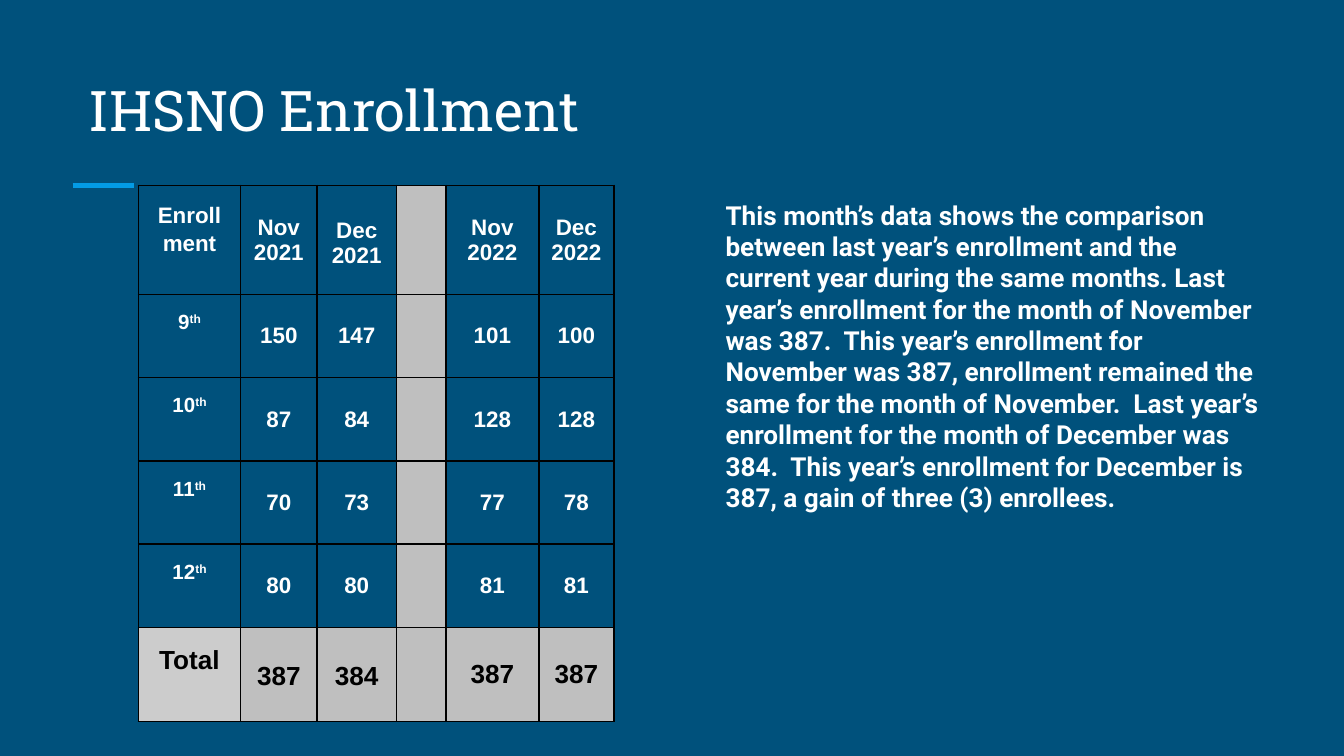
from lxml.etree import SubElement
from pptx import Presentation
from pptx.dml.color import RGBColor
from pptx.enum.shapes import MSO_CONNECTOR
from pptx.enum.text import MSO_ANCHOR, PP_ALIGN
from pptx.oxml.ns import qn
from pptx.util import Inches, Pt

NAVY = RGBColor(0x00, 0x51, 0x7C)
ACCENT = RGBColor(0x03, 0x9B, 0xE5)
WHITE = RGBColor(0xFF, 0xFF, 0xFF)
BLACK = RGBColor(0x00, 0x00, 0x00)
GRAY = RGBColor(0xBF, 0xBF, 0xBF)
LIGHT_GRAY = RGBColor(0xCC, 0xCC, 0xCC)

SLIDE_WIDTH = 10
SLIDE_HEIGHT = SLIDE_WIDTH * 9 / 16
COLUMN_WIDTHS = [0.76, 0.57, 0.59, 0.37, 0.69, 0.56]
ROW_HEIGHTS = [0.81, 0.62, 0.62, 0.62, 0.62, 0.7]
GAP_COLUMN = 3
ENROLLMENT = [
    ["Enrollment", "Nov\n2021", "Dec\n2021", "", "Nov\n2022", "Dec\n2022"],
    ["9", "150", "147", "", "101", "100"],
    ["10", "87", "84", "", "128", "128"],
    ["11", "70", "73", "", "77", "78"],
    ["12", "80", "80", "", "81", "81"],
    ["Total", "387", "384", "", "387", "387"],
]
TOTAL_ROW = len(ENROLLMENT) - 1
SUMMARY = (
    "This month’s data shows the comparison between last year’s enrollment and the "
    "current year during the same months. Last year’s enrollment for the month of "
    "November was 387.  This year’s enrollment for November was 387, enrollment "
    "remained the same for the month of November.  Last year’s enrollment for the "
    "month of December was 384.  This year’s enrollment for December is 387, a gain "
    "of three (3) enrollees."
)


def add_run(paragraph, text, size, font_name, color, bold=True):
    run = paragraph.add_run()
    run.text = text
    for name, value in {"size": Pt(size), "name": font_name, "bold": bold}.items():
        setattr(run.font, name, value)
    run.font.color.rgb = color
    return run


def add_text(slide, box, text, size, font_name, bold, anchor):
    frame = slide.shapes.add_textbox(*map(Inches, box)).text_frame
    margins = dict.fromkeys(
        ["margin_left", "margin_top", "margin_right", "margin_bottom"], Inches(0.1))
    for name, value in {**margins, "word_wrap": True, "vertical_anchor": anchor}.items():
        setattr(frame, name, value)
    add_run(frame.paragraphs[0], text, size, font_name, WHITE, bold)


def add_accent_line(slide, left, top, width):
    line = slide.shapes.add_connector(
        MSO_CONNECTOR.STRAIGHT, *map(Inches, (left, top, left + width, top)))
    line.line.color.rgb = ACCENT
    line.line.width = Pt(3)
    SubElement(line._element.spPr, qn("a:effectLst"))


def set_borders(cell):
    properties = cell._tc.get_or_add_tcPr()
    for position, side in enumerate(("a:lnL", "a:lnR", "a:lnT", "a:lnB")):
        border = SubElement(properties, qn(side), w=str(Pt(1)))
        fill = SubElement(border, qn("a:solidFill"))
        SubElement(fill, qn("a:srgbClr"), val=str(BLACK))
        # Borders come before the fill in the cell properties
        properties.insert(position, border)


def fill_cell(cell, row, column, text):
    is_label, is_total = column == 0, row == TOTAL_ROW
    is_dec_2021 = (row, column) == (0, 2)
    top_anchored = is_label or is_dec_2021
    # The label column is a little tighter, so its heading breaks as "Enroll / ment"
    side_margin = Inches(0.08 if is_label else 0.07)
    settings = {
        "margin_left": side_margin,
        "margin_right": side_margin,
        "margin_top": Inches(0.24 if is_dec_2021 else 0.1),
        "margin_bottom": Inches(0.1),
        "vertical_anchor": MSO_ANCHOR.TOP if top_anchored else MSO_ANCHOR.MIDDLE,
    }
    for name, value in settings.items():
        setattr(cell, name, value)

    # Background
    if is_total or column == GAP_COLUMN:
        cell.fill.solid()
        cell.fill.fore_color.rgb = LIGHT_GRAY if is_label else GRAY
    else:
        cell.fill.background()
    set_borders(cell)
    if not text:
        return

    # Text, with ordinal endings on the grade labels
    is_grade = is_label and text.isdigit()
    size = 14 if is_total else 11 if is_grade else 12
    color = BLACK if is_total else WHITE
    frame = cell.text_frame
    for index, line in enumerate(text.split("\n")):
        paragraph = frame.add_paragraph() if index else frame.paragraphs[0]
        paragraph.alignment = PP_ALIGN.CENTER
        if is_label or (is_total and column < GAP_COLUMN):
            paragraph.line_spacing = 1.15
            paragraph.space_before = Pt(12)
        add_run(paragraph, line, size, "Arial", color)
        if is_grade:
            ending = add_run(paragraph, "th", size, "Arial", color)
            ending._r.get_or_add_rPr().set("baseline", "30000")


def add_enrollment_table(slide, left, top):
    box = (left, top, sum(COLUMN_WIDTHS), sum(ROW_HEIGHTS))
    table = slide.shapes.add_table(
        len(ROW_HEIGHTS), len(COLUMN_WIDTHS), *map(Inches, box)).table
    table.first_row = table.horz_banding = False
    for column, width in zip(table.columns, COLUMN_WIDTHS):
        column.width = Inches(width)
    for row, height in zip(table.rows, ROW_HEIGHTS):
        row.height = Inches(height)
    for row, values in enumerate(ENROLLMENT):
        for column, text in enumerate(values):
            fill_cell(table.cell(row, column), row, column, text)


def main():
    presentation = Presentation()
    presentation.slide_width = Inches(SLIDE_WIDTH)
    presentation.slide_height = Inches(SLIDE_HEIGHT)
    slide = presentation.slides.add_slide(presentation.slide_layouts[6])
    slide.background.fill.solid()
    slide.background.fill.fore_color.rgb = NAVY

    # Heading
    add_accent_line(slide, 0.54, 1.38, 0.46)
    add_text(slide, (0.56, 0.41, 9.15, 0.75), "IHSNO Enrollment",
             30, "Roboto Slab", False, MSO_ANCHOR.BOTTOM)

    # Figures and commentary
    add_enrollment_table(slide, 1.03, 1.38)
    add_text(slide, (5.3, 1.38, 4.19, 2.79), SUMMARY,
             14, "Roboto", True, MSO_ANCHOR.TOP)
    presentation.save("out.pptx")


if __name__ == "__main__":
    main()
